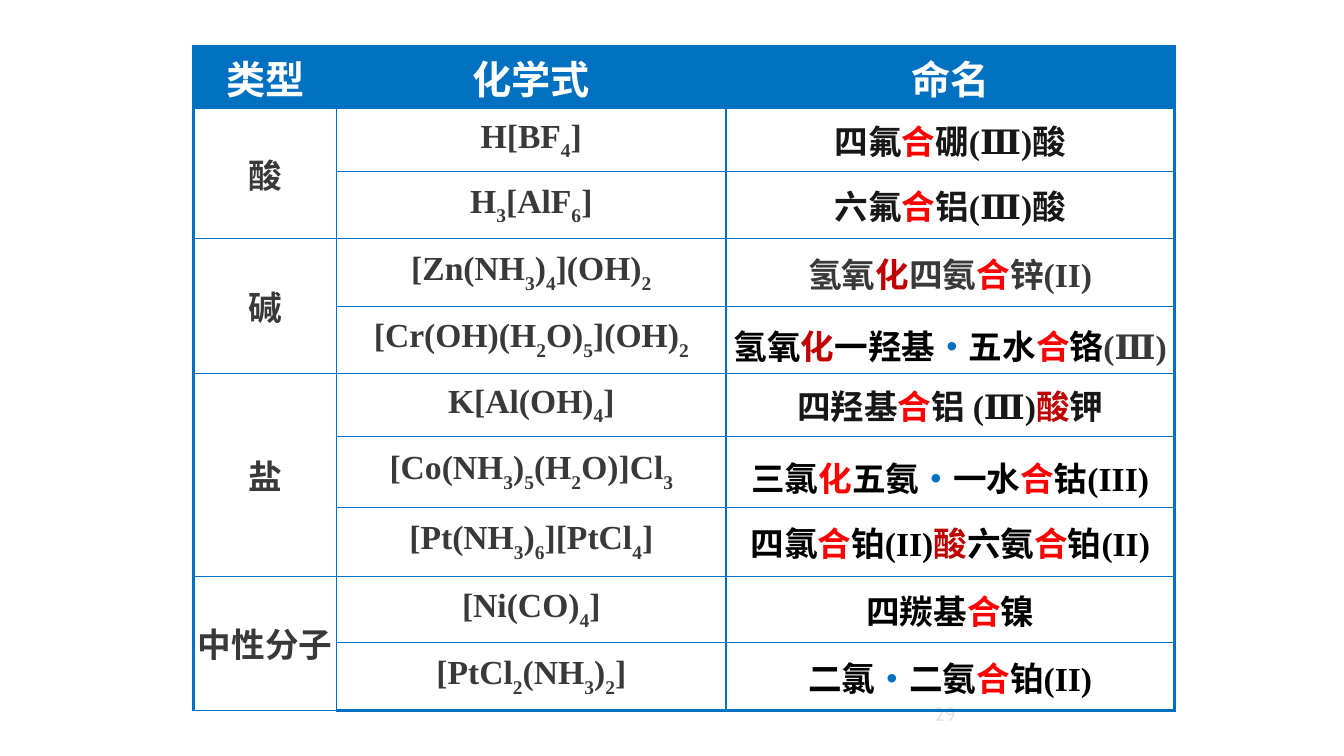
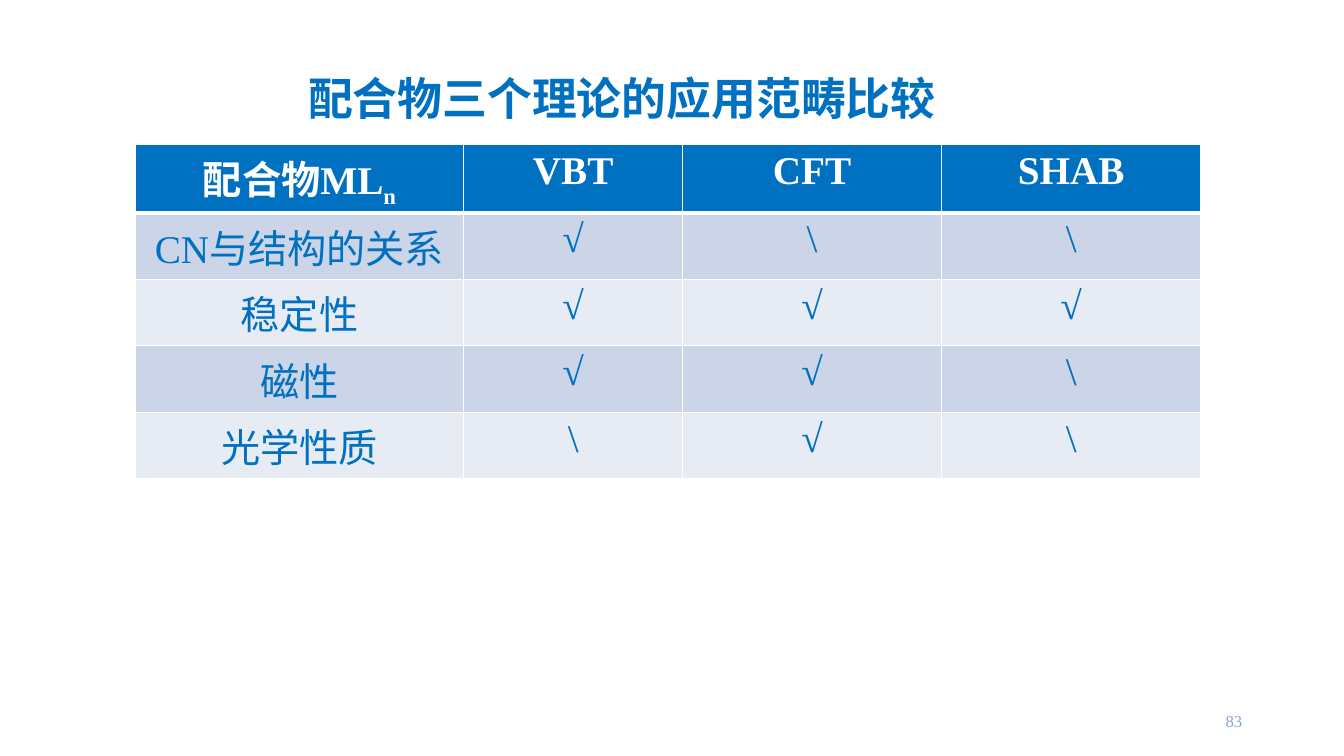
import itertools

import lxml.etree
import pptx
import pptx.dml.color
import pptx.enum.text
import pptx.oxml.ns
import pptx.util

Inches = pptx.util.Inches
Pt = pptx.util.Pt
RGBColor = pptx.dml.color.RGBColor
ALIGN = pptx.enum.text.PP_ALIGN
ANCHOR = pptx.enum.text.MSO_ANCHOR

BLUE = RGBColor(0x00, 0x70, 0xC0)
RED = RGBColor(0xFF, 0x00, 0x00)
CRIMSON = RGBColor(0xC0, 0x00, 0x00)
GRAY = RGBColor(0x3B, 0x38, 0x38)
INK = RGBColor(0x18, 0x17, 0x17)
BLACK = RGBColor(0x00, 0x00, 0x00)
WHITE = RGBColor(0xFF, 0xFF, 0xFF)
PALE_GRAY = RGBColor(0xE7, 0xE6, 0xE6)
PALE_BLUE = RGBColor(0x8C, 0xA4, 0xD2)
BANDS = (RGBColor(0xCC, 0xD5, 0xE8), RGBColor(0xE7, 0xEB, 0xF4))

SERIF = "Times New Roman"
SANS = "Cabin"
MARKS = {"*": RED, "!": CRIMSON, "+": BLUE, "~": GRAY}

COMPOUND_HEADS = ("类型", "化学式", "命名")
COMPOUND_GROUPS = (
    ("酸", (
        ("H[BF4]", -25, "四氟|*合|硼(Ⅲ)酸", INK, 1),
        ("H3[AlF6]", -25, "六氟|*合|铝(Ⅲ)酸", INK, 1),
    )),
    ("碱", (
        ("[Zn(NH3)4](OH)2", -30, "氢氧|!化|四氨|*合|锌(II)", GRAY, 1),
        ("[Cr(OH)(H2O)5](OH)2", -30,
         "氢氧|!化|一羟基|+•|五水|*合|铬|~(Ⅲ)", BLACK, 1.2),
    )),
    ("盐", (
        ("K[Al(OH)4]", -25, "四羟基|*合|铝 (Ⅲ)|!酸|钾", INK, 1),
        ("[Co(NH3)5(H2O)]Cl3", -30,
         "三氯|*化|五氨|+•|一水|*合|钴(III)", BLACK, 1.2),
        ("[Pt(NH3)6][PtCl4]", -30,
         "四氯|*合|铂(II)|!酸|六氨|*合|铂(II)", BLACK, 1),
    )),
    ("中性分子", (
        ("[Ni(CO)4]", -30, "四羰基|*合|镍", BLACK, 1),
        ("[PtCl2(NH3)2]", -30, "二氯|+•|二氨|*合|铂(II)", BLACK, 1),
    )),
)
THEORY_HEADS = ("VBT", "CFT", "SHAB")
THEORY_ROWS = (
    ("CN与结构的关系", "√", "\\", "\\"),
    ("稳定性", "√", "√", "√"),
    ("磁性", "√", "√", "\\"),
    ("光学性质", "\\", "√", "\\"),
)


def formula_spans(formula, color, baseline):
    return [("".join(part), color, baseline if is_digit else 0)
            for is_digit, part in itertools.groupby(formula, str.isdigit)]


def name_spans(marked, color):
    return [(part[1:], MARKS[part[0]], 0) if part[0] in MARKS
            else (part, color, 0) for part in marked.split("|")]


def write(frame, spans, size, font=SERIF, bold=False, align=ALIGN.CENTER,
          spacing=1):
    para = frame.paragraphs[0]
    para.alignment = align
    para.line_spacing = spacing
    for text, color, baseline in spans:
        span = para.add_run()
        span.text = text
        span.font.name = font
        span.font.size = Pt(size)
        span.font.bold = bold
        span.font.color.rgb = color
        if baseline:
            span._r.get_or_add_rPr().set("baseline", str(baseline * 1000))


def set_borders(cell, color, widths):
    properties = cell._tc.get_or_add_tcPr()
    for side, width in zip("LRTB", widths):
        line = lxml.etree.SubElement(
            properties, pptx.oxml.ns.qn(f"a:ln{side}"), w=str(Pt(width)))
        fill = lxml.etree.SubElement(line, pptx.oxml.ns.qn("a:solidFill"))
        lxml.etree.SubElement(
            fill, pptx.oxml.ns.qn("a:srgbClr"), val=str(color))


def fill_cell(cell, color):
    if color is None:
        cell.fill.background()
    else:
        cell.fill.solid()
        cell.fill.fore_color.rgb = color


def add_grid(page, left, top, columns, rows):
    table = page.shapes.add_table(
        len(rows), len(columns), Inches(left), Inches(top),
        Inches(sum(columns)), Inches(sum(rows))).table
    table.first_row = False
    table.horz_banding = False
    for column, width in zip(table.columns, columns):
        column.width = Inches(width)
    for row, height in zip(table.rows, rows):
        row.height = Inches(height)
    return table


def add_page_number(page, number, left, top, width, height, size, font, color):
    box = page.shapes.add_textbox(
        Inches(left), Inches(top), Inches(width), Inches(height))
    frame = box.text_frame
    frame.word_wrap = True
    frame.vertical_anchor = ANCHOR.MIDDLE
    write(frame, [(number, color, 0)], size, font, align=ALIGN.RIGHT)


def add_title(page, text):
    title = page.shapes.title
    title.left, title.top = Inches(0.42), Inches(0.73)
    title.width, title.height = Inches(11.5), Inches(0.55)
    title.text_frame.vertical_anchor = ANCHOR.MIDDLE
    write(title.text_frame, [(text, BLUE, 0)], 32, bold=True, spacing=0.9)


def style_compound_grid(table):
    last_row, last_column = len(table.rows) - 1, len(table.columns) - 1
    for row, column in itertools.product(
            range(last_row + 1), range(last_column + 1)):
        cell = table.cell(row, column)
        edges = (column == 0, column == last_column, row == 0, row == last_row)
        set_borders(cell, BLUE, [2.25 if edge else 1 for edge in edges])
        fill_cell(cell, BLUE if row == 0 else None)
        cell.vertical_anchor = ANCHOR.MIDDLE
        cell.margin_left = cell.margin_right = 0
        cell.margin_top = cell.margin_bottom = 0


def build_compound_page(deck):
    page = deck.slides.add_slide(deck.slide_layouts[6])
    add_page_number(page, "29", 7.5, 6.83, 2.08, 0.5, 14, SANS, PALE_GRAY)
    table = add_grid(
        page, 1.92, 0.46, (1.42, 3.86, 4.45),
        (0.62, 0.62, 0.67, 0.67, 0.67, 0.62, 0.71, 0.68, 0.66, 0.67))
    style_compound_grid(table)
    for column, head in enumerate(COMPOUND_HEADS):
        write(table.cell(0, column).text_frame, [(head, WHITE, 0)], 28, SANS,
              bold=True)
    row = 1
    for kind, compounds in COMPOUND_GROUPS:
        kind_cell = table.cell(row, 0)
        kind_cell.merge(table.cell(row + len(compounds) - 1, 0))
        write(kind_cell.text_frame, [(kind, GRAY, 0)], 24, bold=True)
        for formula, baseline, name, color, spacing in compounds:
            write(table.cell(row, 1).text_frame,
                  formula_spans(formula, GRAY, baseline), 24, bold=True)
            write(table.cell(row, 2).text_frame, name_spans(name, color), 24,
                  bold=True, spacing=spacing)
            row += 1


def build_theory_page(deck):
    page = deck.slides.add_slide(deck.slide_layouts[5])
    add_page_number(page, "83", 9.42, 6.95, 3, 0.4, 12, SERIF, PALE_BLUE)
    add_title(page, "配合物三个理论的应用范畴比较")
    table = add_grid(page, 1.34, 1.43, (3.26, 2.17, 2.57, 2.57),
                     (0.68, 0.66, 0.66, 0.66, 0.66))
    heads = [[("配合物ML", WHITE, 0), ("n", WHITE, -25)]]
    heads += [[(head, WHITE, 0)] for head in THEORY_HEADS]
    body = [[[(text, BLUE, 0)] for text in texts] for texts in THEORY_ROWS]
    for row, contents in enumerate([heads] + body):
        is_head = row == 0
        for column, spans in enumerate(contents):
            cell = table.cell(row, column)
            set_borders(cell, WHITE, (1, 1, 3 if row == 1 else 1,
                                      3 if is_head else 1))
            fill_cell(cell, BLUE if is_head else BANDS[(row - 1) % 2])
            write(cell.text_frame, spans, 28, bold=is_head)


def main():
    deck = pptx.Presentation()
    deck.slide_width, deck.slide_height = Inches(13.33), Inches(7.5)
    build_compound_page(deck)
    build_theory_page(deck)
    deck.save("out.pptx")


if __name__ == "__main__":
    main()
